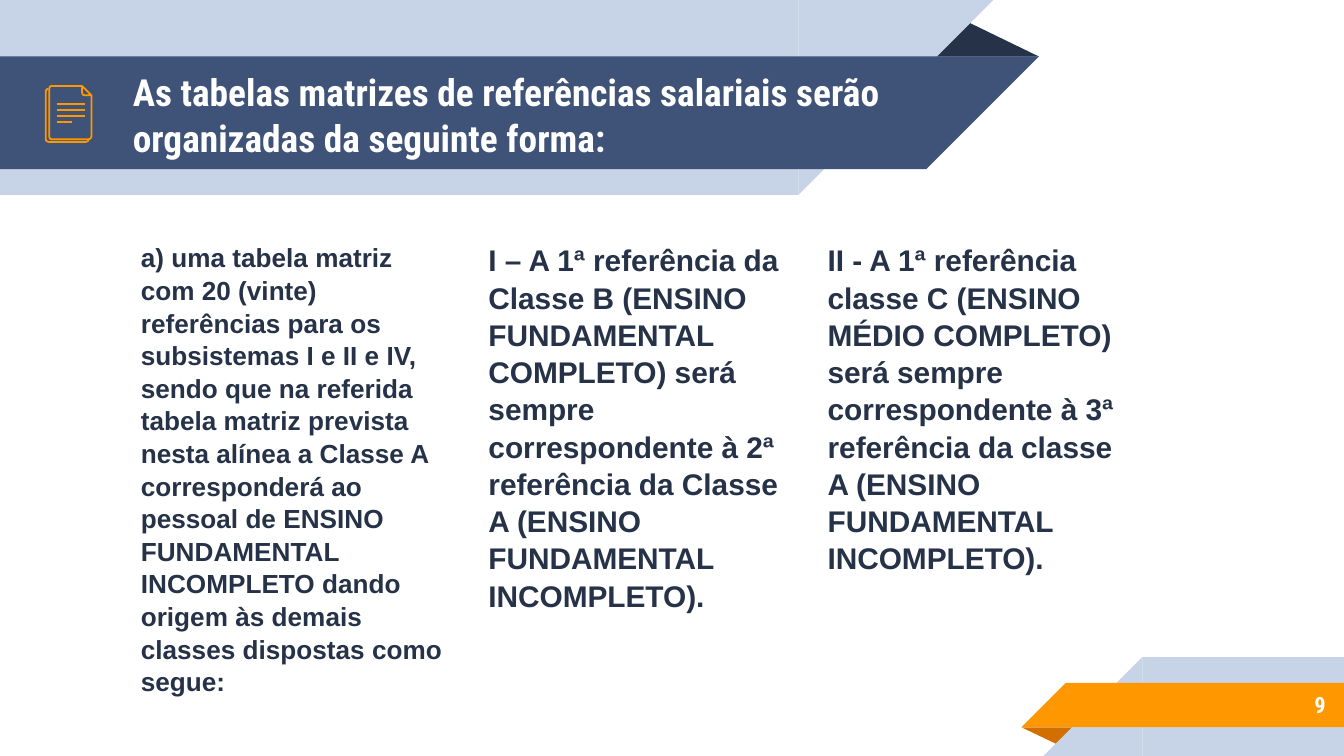
from collections import namedtuple

from lxml.etree import SubElement
from pptx import Presentation
from pptx.dml.color import RGBColor
from pptx.enum.shapes import MSO_CONNECTOR as Connector, MSO_SHAPE as Shape
from pptx.enum.text import MSO_ANCHOR as Anchor, PP_ALIGN as Align
from pptx.oxml.ns import qn
from pptx.util import Pt

Box = namedtuple("Box", "left top width height")

COLORS = {
    "navy": "263248",
    "blue": "3F5378",
    "pale": "C7D3E6",
    "orange": "FF9800",
    "rust": "D26F00",
    "white": "FFFFFF",
}
TITLE = "As tabelas matrizes de referências salariais serão organizadas da seguinte forma:"
COLUMNS = [
    (68.4, 253, 14, "a) uma tabela matriz com 20 (vinte) referências para os subsistemas "
     "I e II e IV, sendo que na referida tabela matriz prevista nesta alínea a Classe A "
     "corresponderá ao pessoal de ENSINO FUNDAMENTAL INCOMPLETO dando origem às demais "
     "classes dispostas como segue:"),
    (254.6, 213, 16, "I – A 1ª referência da Classe B (ENSINO FUNDAMENTAL COMPLETO) será "
     "sempre correspondente à 2ª referência da Classe A (ENSINO FUNDAMENTAL INCOMPLETO)."),
    (436.3, 213, 16, "II - A 1ª referência classe C (ENSINO MÉDIO COMPLETO) será sempre "
     "correspondente à 3ª referência da classe A (ENSINO FUNDAMENTAL INCOMPLETO)."),
]


def color(name):
    """Return the named palette colour."""
    return RGBColor.from_string(COLORS[name])


def points(values):
    """Convert numbers to point lengths."""
    return [Pt(value) for value in values]


def apply_format(target, values):
    """Set each attribute named in a dict."""
    for name, value in values.items():
        setattr(target, name, value)


def add_solid(page, kind, box, fill, rotation=0, mirrored=False):
    """Add a borderless filled shape."""
    shape = page.shapes.add_shape(kind, *points(box))
    shape.shadow.inherit = False
    shape.fill.solid()
    shape.fill.fore_color.rgb = color(fill)
    shape.line.fill.background()
    shape.rotation = rotation
    if mirrored:
        shape._element.spPr.find(qn("a:xfrm")).set("flipH", "1")
    return shape


def add_band(page, box, fill, on_left):
    """Add a bar with a 45 degree tip beyond its inner end."""
    tip_left = box.left + box.width if on_left else box.left - box.height
    tip = Box(tip_left, box.top, box.height, box.height)
    add_solid(page, Shape.RECTANGLE, box, fill)
    add_solid(page, Shape.RIGHT_TRIANGLE, tip, fill, 180 if on_left else 0, True)


def add_fold(page, box, fill, rotation=0):
    """Add the shaded triangle behind a band's tip."""
    fold = add_solid(page, Shape.ISOSCELES_TRIANGLE, box, fill, rotation)
    fold.adjustments[0] = 0.32


def add_text(page, box, text, font, ink, frame_format=None, para_format=None):
    """Add a wrapped text box holding one bold paragraph."""
    frame = page.shapes.add_textbox(*points(box)).text_frame
    margins = {f"margin_{side}": Pt(7.2) for side in ("left", "top", "right", "bottom")}
    apply_format(frame, {"word_wrap": True, **margins, **(frame_format or {})})
    para = frame.paragraphs[0]
    apply_format(para, para_format or {})
    span = para.add_run()
    span.text = text
    apply_format(span.font, {"bold": True, **font})
    span.font.color.rgb = color(ink)


def add_outline(page, box, dots, closed=False):
    """Draw an unfilled orange path given relative to the box."""
    places = [(Pt(box.left + x), Pt(box.top + y)) for x, y in dots]
    builder = page.shapes.build_freeform(*places[0])
    builder.add_line_segments(places[1:], close=closed)
    shape = builder.convert_to_shape()
    shape.shadow.inherit = False
    shape.fill.background()
    shape.line.color.rgb = color("orange")
    shape.line.width = Pt(0.96)


def add_rule(page, left, right, y):
    """Draw one orange horizontal line."""
    rule = page.shapes.add_connector(Connector.STRAIGHT, *points((left, y, right, y)))
    rule.line.color.rgb = color("orange")
    rule.line.width = Pt(0.96)
    SubElement(rule._element.spPr, qn("a:effectLst"))


def add_document_icon(page, box):
    """Draw two stacked sheets with a folded corner and text lines."""
    right, bottom = box.width, box.height
    add_outline(page, box, [
        (1.4, 1.4), (0.4, 1.9), (0, 2.9), (0, bottom - 1.4), (0.4, bottom - 0.4),
        (1.4, bottom), (right - 2.9, bottom), (right - 1.9, bottom - 0.4),
        (right - 1.4, bottom - 1.4)])
    add_outline(page, box, [
        (right, 5), (right, bottom - 2.9), (right - 0.4, bottom - 1.8),
        (right - 1.4, bottom - 1.4), (2.9, bottom - 1.4), (2.2, bottom - 1.8),
        (1.9, bottom - 2.9), (1.9, 1.4), (2.2, 0.4), (2.9, 0), (right - 5, 0)])
    add_outline(page, box, [
        (right - 5, 0), (right, 5), (right - 3.6, 5), (right - 4.6, 4.7),
        (right - 5, 3.6)], True)
    for row, length in enumerate((15.3, 15.3, 15.3, 8)):
        left = box.left + 5.9
        add_rule(page, left, left + length, box.top + 9.7 + 3.2 * row)


def add_header(page, box):
    """Place the title banner, its icon and the title."""
    add_fold(page, Box(box.left + 495.4, box.top + 10.1, 61.2, 20.2), "navy")
    add_band(page, Box(box.left, box.top, 427.7, box.height), "pale", True)
    add_band(page, Box(box.left, box.top + 30.2, 496.1, 60.5), "blue", True)
    add_text(page, Box(box.left + 64.1, box.top + 31, 446.4, 60.5), TITLE,
             {"name": "Roboto Condensed", "size": Pt(20)}, "white",
             {"vertical_anchor": Anchor.MIDDLE}, {"line_spacing": 1.03})
    add_document_icon(page, Box(box.left + 24.5, box.top + 46.1, 24.5, 29.9))


def add_columns(page, box):
    """Place the three body columns."""
    for left, height, size, text in COLUMNS:
        add_text(page, Box(left, box.top, 177.1, height), text,
                 {"name": "Arial", "size": Pt(size)}, "navy",
                 para_format={"space_before": Pt(6), "line_spacing": 1.04})


def add_footer(page, box):
    """Place the corner ribbon with the slide number."""
    right = box.left + box.width
    add_fold(page, Box(box.left, box.top + 37.6, 31, 10.1), "rust", 180)
    add_band(page, Box(right - 108, box.top, 108, box.height), "pale", False)
    add_band(page, Box(right - 149, box.top + 13.8, 149, 23.8), "orange", False)
    add_text(page, Box(right - 120.2, box.top + 13.1, 117.4, 25.2), "9",
             {"name": "Roboto Condensed", "size": Pt(12)}, "white",
             {"vertical_anchor": Anchor.MIDDLE}, {"alignment": Align.RIGHT})


def main():
    """Build and save the deck."""
    deck = Presentation()
    apply_format(deck, {"slide_width": Pt(720), "slide_height": Pt(405)})
    page = deck.slides.add_slide(deck.slide_layouts[6])
    add_header(page, Box(0, 0, 556.6, 104.4))
    add_columns(page, Box(68.4, 121.7, 545, 253))
    add_footer(page, Box(547.2, 352, 172.8, 53))
    deck.save("out.pptx")


if __name__ == "__main__":
    main()
